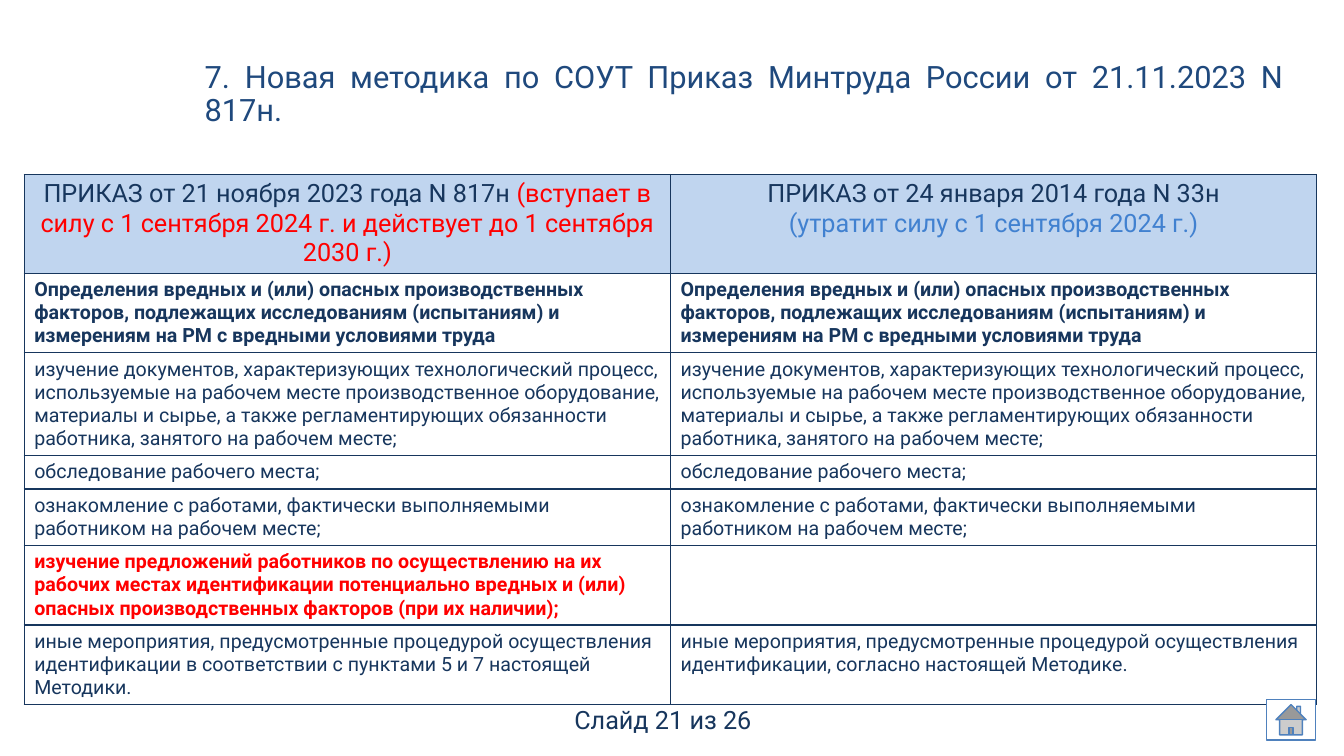
from dataclasses import dataclass

from lxml import etree
from pptx import Presentation
from pptx import util as u
from pptx.dml.color import RGBColor
from pptx.enum import shapes, text
from pptx.oxml import ns

SCALE = 9144


@dataclass(frozen=True)
class Theme:
    font: str = "Roboto"
    title: str = "1F497D"
    ink: str = "17365D"
    alert: str = "FF0000"
    muted: str = "4181D0"
    header_fill: str = "C0D5EF"
    white: str = "FFFFFF"
    button_line: str = "4F81BD"
    title_size: int = 22
    header_size: int = 18
    body_size: int = 14


THEME = Theme()

TITLE = "7. Новая методика по СОУТ Приказ Минтруда России от 21.11.2023 N 817н."
NEW_ORDER = "ПРИКАЗ от 21 ноября 2023 года N 817н "
NEW_TERM = "(вступает в силу с 1 сентября 2024 г. и действует до 1 сентября 2030 г.)"
OLD_ORDER = "ПРИКАЗ от 24 января 2014 года N 33н"
OLD_TERM = "(утратит силу с 1 сентября 2024 г.)"
SUBHEADING = (
    "Определения вредных и (или) опасных производственных факторов, подлежащих "
    "исследованиям (испытаниям) и измерениям на РМ с вредными условиями труда"
)
SHARED_STEPS = [
    "изучение документов, характеризующих технологический процесс, используемые на "
    "рабочем месте производственное оборудование, материалы и сырье, а также "
    "регламентирующих обязанности работника, занятого на рабочем месте;",
    "обследование рабочего места;",
    "ознакомление с работами, фактически выполняемыми работником на рабочем месте;",
]
ADDED_STEP = (
    "изучение предложений работников по осуществлению на их рабочих местах идентификации "
    "потенциально вредных и (или) опасных производственных факторов (при их наличии);"
)
OTHER_STEPS = "иные мероприятия, предусмотренные процедурой осуществления идентификации"
NEW_OTHER = OTHER_STEPS + " в соответствии с пунктами 5 и 7 настоящей Методики."
OLD_OTHER = OTHER_STEPS + ", согласно настоящей Методике."

ROW_HEIGHTS = [98, 79, 102, 32, 55, 79, 79]
COLUMN_WIDTH = 641


def px(length):
    return u.Emu(length * SCALE)


def color(value):
    return RGBColor.from_string(value)


def add_run(paragraph, content, size=THEME.body_size, ink=THEME.ink, bold=False, align=None):
    run = paragraph.add_run()
    run.text = content
    run.font.name = THEME.font
    run.font.size = u.Pt(size)
    run.font.bold = bold
    run.font.color.rgb = color(ink)
    if align is not None:
        paragraph.alignment = align


def add_title(slide):
    title = slide.shapes.title
    title.left, title.top, title.width, title.height = map(px, (193, 57, 1090, 54))
    frame = title.text_frame
    frame.word_wrap = True
    frame.auto_size = text.MSO_AUTO_SIZE.NONE
    frame.vertical_anchor = text.MSO_ANCHOR.TOP
    paragraph = frame.paragraphs[0]
    paragraph.line_spacing = 0.89
    add_run(paragraph, TITLE, size=THEME.title_size, ink=THEME.title,
            align=text.PP_ALIGN.JUSTIFY)


def style_cell(cell, fill=None):
    properties = cell._tc.get_or_add_tcPr()
    for side in ("a:lnL", "a:lnR", "a:lnT", "a:lnB"):
        line = etree.SubElement(properties, ns.qn(side), w=str(u.Pt(1)))
        solid = etree.SubElement(line, ns.qn("a:solidFill"))
        etree.SubElement(solid, ns.qn("a:srgbClr"), val=THEME.ink)
    if fill:
        cell.fill.solid()
        cell.fill.fore_color.rgb = color(fill)
    else:
        cell.fill.background()


def fill_header(table):
    header = {"size": THEME.header_size, "align": text.PP_ALIGN.CENTER}
    new_paragraph = table.cell(0, 0).text_frame.paragraphs[0]
    add_run(new_paragraph, NEW_ORDER, **header)
    add_run(new_paragraph, NEW_TERM, ink=THEME.alert, **header)
    old_frame = table.cell(0, 1).text_frame
    add_run(old_frame.paragraphs[0], OLD_ORDER, **header)
    add_run(old_frame.add_paragraph(), OLD_TERM, ink=THEME.muted, **header)


def add_comparison(slide):
    rows = [(SUBHEADING, SUBHEADING, {"bold": True})]
    rows += [(step, step, {}) for step in SHARED_STEPS]
    rows += [(ADDED_STEP, "", {"bold": True, "ink": THEME.alert}), (NEW_OTHER, OLD_OTHER, {})]
    table = slide.shapes.add_table(
        len(ROW_HEIGHTS), 2, px(24), px(173), px(2 * COLUMN_WIDTH), px(sum(ROW_HEIGHTS))
    ).table
    table.first_row = False
    table.horz_banding = False
    for column in table.columns:
        column.width = px(COLUMN_WIDTH)
    for row_index, (row, height) in enumerate(zip(table.rows, ROW_HEIGHTS)):
        row.height = px(height)
        for cell in row.cells:
            style_cell(cell, fill=None if row_index else THEME.header_fill)
    fill_header(table)
    for row_index, (new_step, old_step, style) in enumerate(rows, start=1):
        for column_index, step in enumerate((new_step, old_step)):
            if step:
                paragraph = table.cell(row_index, column_index).text_frame.paragraphs[0]
                add_run(paragraph, step, **style)


def add_page_label(slide):
    frame = slide.shapes.add_textbox(*map(px, (510, 694, 295, 40))).text_frame
    frame.word_wrap = True
    frame.auto_size = text.MSO_AUTO_SIZE.SHAPE_TO_FIT_TEXT
    add_run(frame.paragraphs[0], "Слайд 21 из 26", size=THEME.header_size,
            align=text.PP_ALIGN.CENTER)


def add_home_button(slide):
    shape = slide.shapes.add_shape(
        shapes.MSO_SHAPE.ACTION_BUTTON_HOME, *map(px, (1256, 694, 49, 40))
    )
    shape.shadow.inherit = False
    shape.fill.solid()
    shape.fill.fore_color.rgb = color(THEME.white)
    shape.line.color.rgb = color(THEME.button_line)
    shape.line.width = u.Pt(1)


def main():
    presentation = Presentation()
    presentation.slide_width = px(1333)
    presentation.slide_height = px(750)
    slide = presentation.slides.add_slide(presentation.slide_layouts[5])
    add_title(slide)
    add_comparison(slide)
    add_page_label(slide)
    add_home_button(slide)
    presentation.save("out.pptx")


if __name__ == "__main__":
    main()
